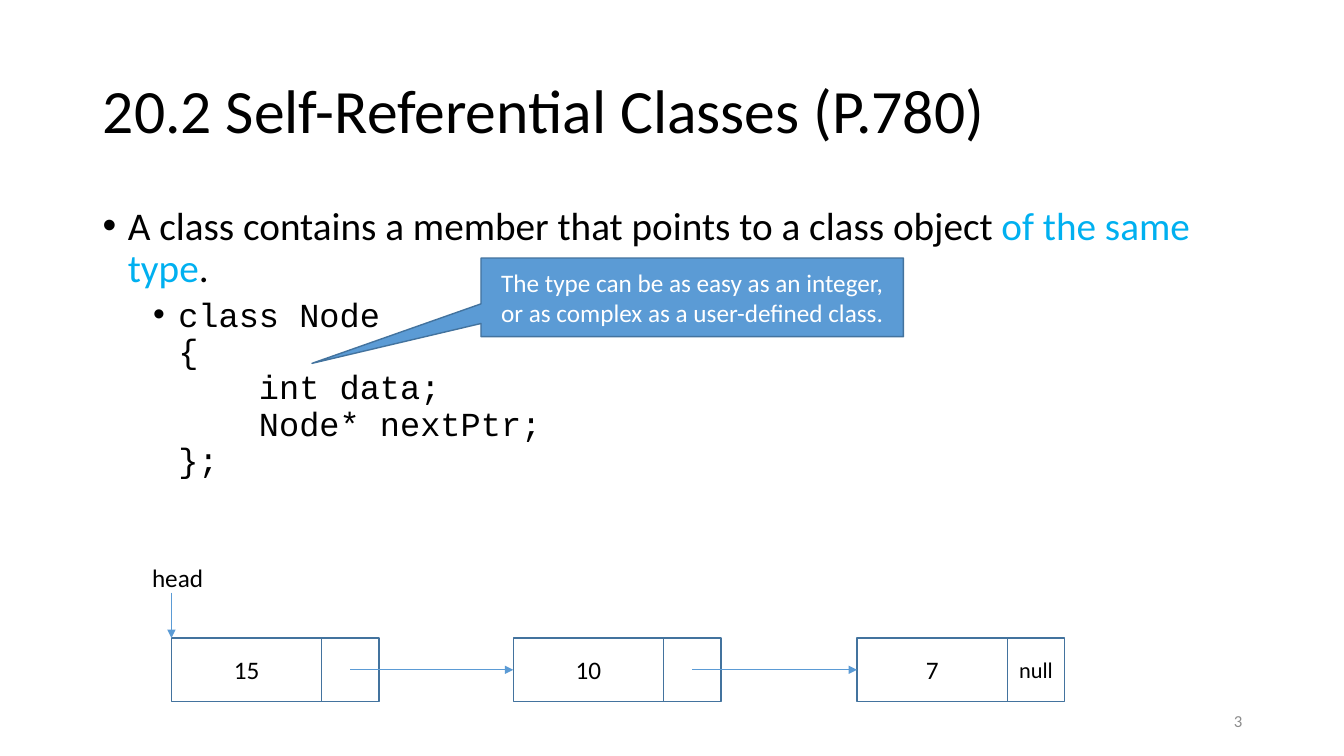
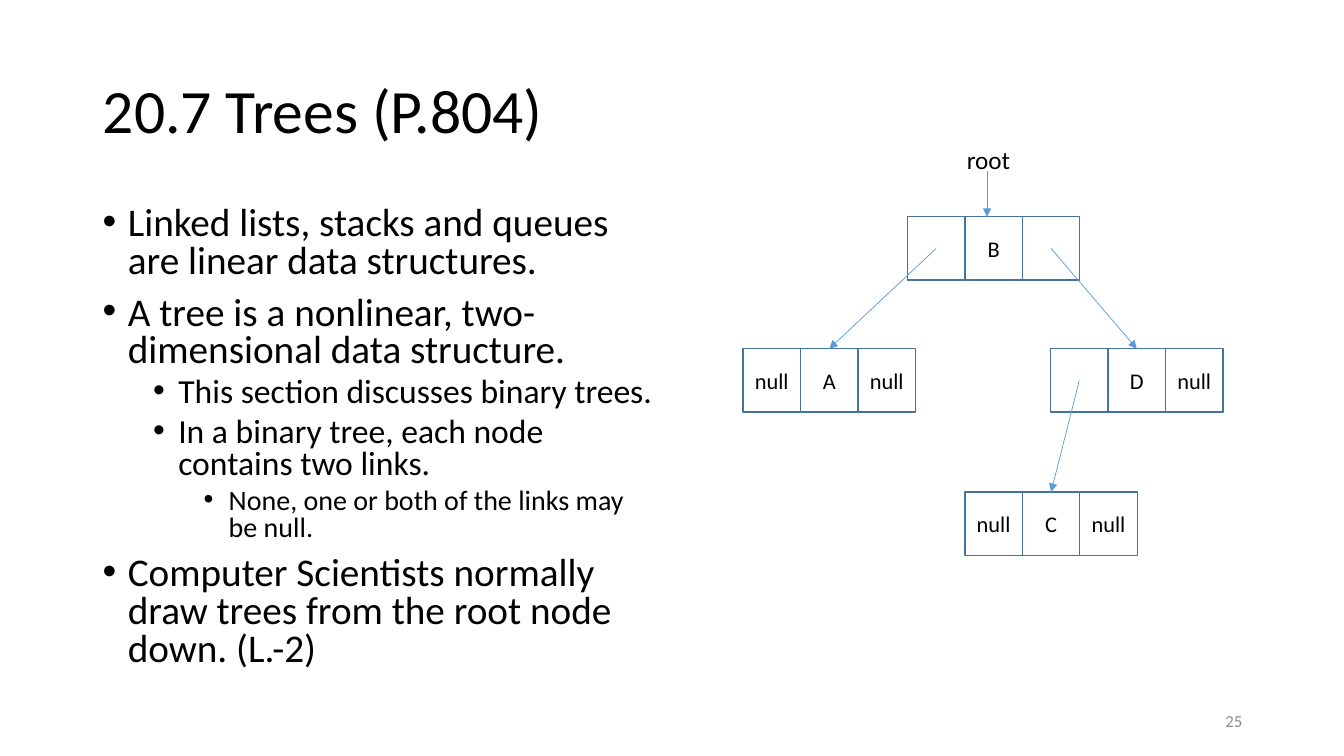
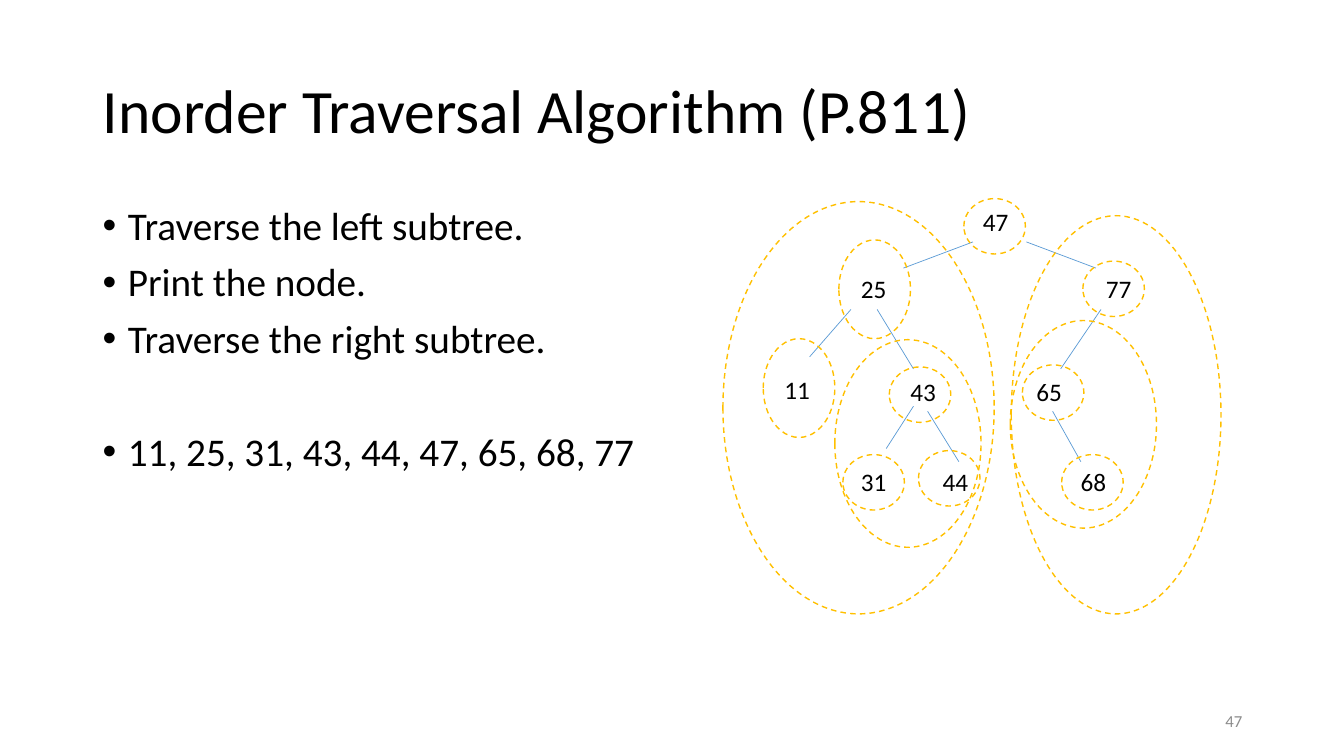
from lxml.etree import SubElement
from pptx import Presentation
from pptx.dml.color import RGBColor
from pptx.enum.dml import MSO_LINE
from pptx.enum.shapes import MSO_CONNECTOR, MSO_SHAPE
from pptx.enum.text import MSO_ANCHOR, MSO_AUTO_SIZE, PP_ALIGN
from pptx.oxml.ns import qn
from pptx.util import Inches, Pt

TOP, LEFT = 0, 1  # connection sites of a rectangle


def rgb(hex_color):
    return RGBColor.from_string(hex_color)


def add_text(paragraph, text, size=18, color="000000", font="Calibri", align=None):
    run = paragraph.add_run()
    run.text = text
    run.font.size = Pt(size)
    run.font.name = font
    run.font.color.rgb = rgb(color)
    if align is not None:
        paragraph.alignment = align


class Deck:
    BLACK, WHITE, GRAY, CYAN = "000000", "FFFFFF", "8C8C8C", "00B0F0"
    BLUE, OUTLINE, GOLD = "5B9BD5", "43739E", "FFC000"
    CODE_FONT = "Courier New"
    LEVEL_SIZES = (28, 24, 20)
    CELL_WIDTH, CELL_HEIGHT = 0.57, 0.63

    def __init__(self):
        self.presentation = Presentation()
        self.presentation.slide_width = Inches(13.33)
        self.presentation.slide_height = Inches(7.5)
        self.slide = None

    def start_slide(self, heading, number):
        self.slide = self.presentation.slides.add_slide(self.presentation.slide_layouts[5])
        title = self.slide.shapes.title
        title.left, title.top = Inches(0.92), Inches(0.4)
        title.width, title.height = Inches(11.5), Inches(1.45)
        frame = title.text_frame
        frame.auto_size = MSO_AUTO_SIZE.NONE
        frame.vertical_anchor = MSO_ANCHOR.MIDDLE
        frame.paragraphs[0].line_spacing = 0.9
        add_text(frame.paragraphs[0], heading, size=44, align=PP_ALIGN.LEFT)
        self.label(str(number), 9.42, 6.95, 3, anchor=MSO_ANCHOR.MIDDLE,
                   size=12, color=self.GRAY, align=PP_ALIGN.RIGHT)

    def text_frame(self, left, top, width, height):
        box = self.slide.shapes.add_textbox(Inches(left), Inches(top), Inches(width), Inches(height))
        box.text_frame.word_wrap = True
        return box.text_frame

    def label(self, text, left, top, width, anchor=MSO_ANCHOR.TOP, **style):
        frame = self.text_frame(left, top, width, 0.4)
        frame.vertical_anchor = anchor
        add_text(frame.paragraphs[0], text, **style)

    def body(self, width, height, items, spacing=0.9):
        """Write items of (level, text or coloured spans, optional space before)."""
        frame = self.text_frame(0.92, 2, width, height)
        for level, content, *space in items:
            paragraph = self.next_paragraph(frame)
            self.format_item(paragraph, level, spacing, space[0] if space else 5 if level else 10)
            spans = [(content, self.BLACK)] if isinstance(content, str) else content
            for text, color in spans:
                add_text(paragraph, text, size=self.LEVEL_SIZES[level], color=color)
        return frame

    def code(self, frame, lines):
        """Write lines of (depth, text); the first one carries the bullet."""
        for index, (depth, text) in enumerate(lines):
            paragraph = self.next_paragraph(frame)
            self.format_item(paragraph, 1, 0.9, 0 if index else 5, bullet=not index, shift=0.8 * depth)
            add_text(paragraph, text, size=24, font=self.CODE_FONT)

    def next_paragraph(self, frame):
        first = frame.paragraphs[0]
        return frame.add_paragraph() if first.runs else first

    def format_item(self, paragraph, level, spacing, before, bullet=True, shift=0):
        paragraph.level = level
        paragraph.line_spacing = spacing
        paragraph.space_before = Pt(before)
        properties = paragraph._p.get_or_add_pPr()
        properties.set("marL", str(Inches(0.25 + 0.5 * level + shift)))
        properties.set("indent", str(Inches(-0.25 if bullet else 0)))
        if bullet:
            SubElement(properties, qn("a:buFont"), typeface="Arial")
            SubElement(properties, qn("a:buChar"), char="•")

    def shape(self, kind, left, top, width, height, text="", line=OUTLINE, fill=None, dash=None, **style):
        shape = self.slide.shapes.add_shape(kind, Inches(left), Inches(top), Inches(width), Inches(height))
        shape.shadow.inherit = False
        if fill:
            shape.fill.solid()
            shape.fill.fore_color.rgb = rgb(fill)
        else:
            shape.fill.background()
        shape.line.color.rgb = rgb(line)
        shape.line.width = Pt(1)
        if dash:
            shape.line.dash_style = dash
        if text:
            shape.text_frame.vertical_anchor = MSO_ANCHOR.MIDDLE
            add_text(shape.text_frame.paragraphs[0], text, align=PP_ALIGN.CENTER, **style)
        return shape

    def cell(self, left, top, text="", width=CELL_WIDTH, size=16):
        return self.shape(MSO_SHAPE.RECTANGLE, left, top, width, self.CELL_HEIGHT, text, size=size)

    def list_node(self, left, top, value, link=""):
        value_width = 1.49
        return (self.cell(left, top, value, value_width, 18),
                self.cell(left + value_width, top, link))

    def tree_node(self, left, top, *texts):
        return [self.cell(left + i * self.CELL_WIDTH, top, text) for i, text in enumerate(texts)]

    def ring(self, left, top, width, height):
        self.shape(MSO_SHAPE.OVAL, left, top, width, height, line=self.GOLD, dash=MSO_LINE.DASH)

    def line(self, start, end, arrow=False):
        connector = self.slide.shapes.add_connector(
            MSO_CONNECTOR.STRAIGHT, *(Inches(value) for value in (*start, *end)))
        connector.line.color.rgb = rgb(self.BLUE)
        connector.line.width = Pt(0.5)
        properties = connector._element.spPr
        if arrow:
            SubElement(properties.find(qn("a:ln")), qn("a:tailEnd"), type="triangle")
        SubElement(properties, qn("a:effectLst"))
        return connector

    def link(self, source, target, side):
        """Draw an arrow from the centre of one cell to a side of another."""
        center = ((source.left + source.width / 2) / Inches(1),
                  (source.top + source.height / 2) / Inches(1))
        self.line(center, center, arrow=True).end_connect(target, side)


def self_referential_slide(deck):
    deck.start_slide("20.2 Self-Referential Classes (P.780)", 3)
    frame = deck.body(11.5, 3.05, [
        (0, [("A class contains a member that points to a class object ", deck.BLACK),
             ("of the same type", deck.CYAN), (".", deck.BLACK)])])
    deck.code(frame, [(0, "class Node"), (0, "{"), (1, "int data;"), (1, "Node* nextPtr;"), (0, "};")])

    nodes = [deck.list_node(left, 6.33, *texts) for left, *texts in
             ((1.7, "15"), (5.09, "10"), (8.5, "7", "null"))]
    for (_, pointer), (value, _) in zip(nodes, nodes[1:]):
        deck.link(pointer, value, LEFT)
    deck.label("head", 1.41, 5.53, 1.03)
    deck.line((1.7, 5.88), (1.7, 6.33), arrow=True)

    callout = deck.shape(
        MSO_SHAPE.RECTANGULAR_CALLOUT, 4.77, 2.56, 4.19, 0.78,
        "The type can be as easy as an integer, or as complex as a user-defined class.",
        fill=deck.BLUE, color=deck.WHITE)
    callout.adjustments[0], callout.adjustments[1] = -0.9, 0.84


def trees_slide(deck):
    deck.start_slide("20.7 Trees (P.804)", 25)
    deck.body(5.69, 4.79, [
        (0, "Linked lists, stacks and queues are linear data structures."),
        (0, "A tree is a nonlinear, two-dimensional data structure."),
        (1, "This section discusses binary trees."),
        (1, "In a binary tree, each node contains two links."),
        (2, "None, one or both of the links may be null."),
        (0, "Computer Scientists normally draw trees from the root node down. (L.-2)"),
    ], spacing=0.8)

    b_left, _, b_right = deck.tree_node(9, 2.15, "", "B", "")
    _, a_value, _ = deck.tree_node(7.37, 3.46, "null", "A", "null")
    d_left, d_value, _ = deck.tree_node(10.42, 3.46, "", "D", "null")
    _, c_value, _ = deck.tree_node(9.57, 4.88, "null", "C", "null")
    for pointer, child in ((b_left, a_value), (b_right, d_value), (d_left, c_value)):
        deck.link(pointer, child, TOP)
    deck.label("root", 9.49, 1.38, 0.72)
    deck.line((9.79, 1.7), (9.79, 2.15), arrow=True)


def inorder_slide(deck):
    deck.start_slide("Inorder Traversal Algorithm (P.811)", 47)
    deck.body(6.51, 4.76, [
        (0, "Traverse the left subtree."),
        (0, "Print the node."),
        (0, "Traverse the right subtree."),
        (0, "11, 25, 31, 43, 44, 47, 65, 68, 77", 50.5),
    ])

    values = {"47": (9.65, 2), "25": (8.44, 2.66), "77": (10.87, 2.66),
              "11": (7.68, 3.66), "43": (8.93, 3.68), "65": (10.18, 3.68),
              "31": (8.44, 4.58), "44": (9.25, 4.58), "68": (10.62, 4.58)}
    for value, (left, top) in values.items():
        deck.label(value, left, top, 0.52)

    branches = (((9.65, 2.4), (8.96, 2.66)), ((10.18, 2.4), (10.87, 2.66)),
                ((8.44, 3.07), (8.03, 3.54)), ((8.7, 3.07), (9.06, 3.66)),
                ((10.92, 3.07), (10.52, 3.66)), ((9.06, 4.03), (8.79, 4.45)),
                ((9.2, 4.08), (9.51, 4.58)), ((10.44, 4.08), (10.72, 4.58)))
    for parent, child in branches:
        deck.line(parent, child)

    rings_by_size = {
        (2.69, 4.09): [(7.17, 2)],
        (2.08, 3.95): [(10.03, 2.14)],
        (1.45, 2.06): [(8.28, 3.37), (10.02, 3.18)],
        (0.71, 0.98): [(7.57, 3.36), (8.32, 2.38)],
        (0.61, 0.55): [(9.56, 1.97), (10.74, 2.59), (8.82, 3.64), (10.14, 3.62),
                       (8.36, 4.51), (9.11, 4.47), (10.53, 4.51)],
    }
    for size, corners in rings_by_size.items():
        for corner in corners:
            deck.ring(*corner, *size)


def main():
    deck = Deck()
    self_referential_slide(deck)
    trees_slide(deck)
    inorder_slide(deck)
    deck.presentation.save("out.pptx")


if __name__ == "__main__":
    main()
